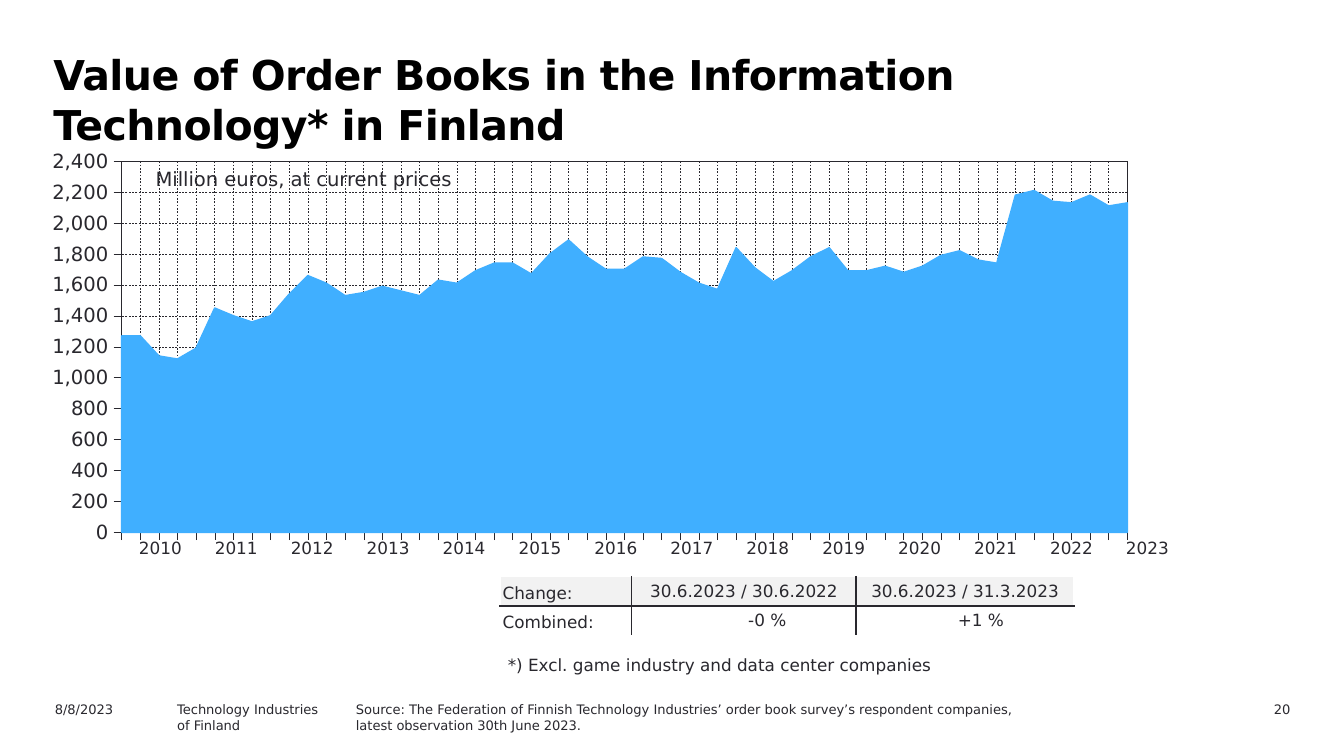
from lxml import etree
from pptx import Presentation
from pptx import util as u
from pptx.chart.data import CategoryChartData
from pptx.dml.color import RGBColor
from pptx.enum import chart as charts, dml, text
from pptx.oxml import parse_xml
from pptx.oxml.ns import nsdecls, qn

FONT = "DejaVu Sans"
INK, WHITE, BLUE, GREY = "29282E", "FFFFFF", "40AFFF", "F2F2F2"
LEFT, CENTER, RIGHT = text.PP_ALIGN.LEFT, text.PP_ALIGN.CENTER, text.PP_ALIGN.RIGHT
MIDDLE, BOTTOM = text.MSO_ANCHOR.MIDDLE, text.MSO_ANCHOR.BOTTOM
NO_STYLE = "{2D5ABB26-0587-4C30-8999-92F81FD0307C}"

ORDER_BOOKS = [
    1270, 1270, 1140, 1120, 1190, 1450, 1400, 1360, 1400, 1540, 1660,
    1610, 1530, 1550, 1590, 1560, 1530, 1630, 1610, 1690, 1740, 1740,
    1670, 1800, 1890, 1780, 1700, 1700, 1780, 1770, 1680, 1610, 1570,
    1840, 1710, 1620, 1690, 1780, 1840, 1690, 1690, 1720, 1680, 1720,
    1790, 1820, 1760, 1740, 2180, 2210, 2140, 2130, 2180, 2110, 2130,
]
CHANGES = [
    ["Change:", "30.6.2023 / 30.6.2022", "30.6.2023 / 31.3.2023"],
    ["Combined:", "-0 %", "+1 %"],
]


def color(hex_code):
    return RGBColor.from_string(hex_code)


def set_font(font, size, hex_code=INK, bold=False):
    font.name = FONT
    font.size = u.Pt(size)
    font.bold = bold
    font.color.rgb = color(hex_code)


def add_text(slide, box, lines, size, align=LEFT, wrap=True, hex_code=INK, bold=False):
    frame = slide.shapes.add_textbox(*map(u.Inches, box)).text_frame
    frame.word_wrap = wrap
    for index, line in enumerate(lines):
        paragraph = frame.add_paragraph() if index else frame.paragraphs[0]
        paragraph.text = line
        paragraph.alignment = align
        set_font(paragraph.font, size, hex_code, bold)
    return frame


def add_title(slide):
    title = "Value of Order Books in the Information Technology* in Finland"
    frame = add_text(slide, (0.28, 0.31, 8.74, 0.71), [title], 22,
                     hex_code="000000", bold=True)
    paragraph = frame.paragraphs[0]
    paragraph.line_spacing = u.Pt(27)
    paragraph._p.get_or_add_pPr().set("marL", str(u.Inches(0.02)))
    paragraph.runs[0].font._element.set("spc", "-30")


def style_line(line, width, dashed=False):
    line.color.rgb = color(INK)
    line.width = u.Pt(width)
    if dashed:
        line.dash_style = dml.MSO_LINE.DASH


def style_axis(axis):
    axis.major_tick_mark = charts.XL_TICK_MARK.OUTSIDE
    axis.minor_tick_mark = charts.XL_TICK_MARK.NONE
    axis.has_major_gridlines = True
    style_line(axis.format.line, 0.22)
    style_line(axis.major_gridlines.format.line, 0.25, dashed=True)


def place_plot(chart, x, y, w, h):
    """Fix the inner plot area as fractions of the chart and frame it."""
    plot_area = chart._chartSpace.find(".//" + qn("c:plotArea"))
    for old in plot_area.findall(qn("c:layout")):
        plot_area.remove(old)
    parts = "".join(f'<c:{name} val="{value}"/>' for name, value in (
        ("layoutTarget", "inner"), ("xMode", "edge"), ("yMode", "edge"),
        ("x", x), ("y", y), ("w", w), ("h", h)))
    plot_area.insert(0, parse_xml(
        f'<c:layout {nsdecls("c")}><c:manualLayout>{parts}</c:manualLayout></c:layout>'))
    plot_area.append(parse_xml(
        f'<c:spPr {nsdecls("c", "a")}><a:noFill/><a:ln w="3175"><a:solidFill>'
        f'<a:srgbClr val="{INK}"/></a:solidFill></a:ln></c:spPr>'))
    plot_area.find(".//" + qn("c:crossBetween")).set("val", "midCat")


def add_order_chart(slide):
    data = CategoryChartData(number_format="#,##0")
    data.categories = [str(n + 1) for n in range(len(ORDER_BOOKS))]
    data.add_series("Series 1", ORDER_BOOKS)
    chart = slide.shapes.add_chart(
        charts.XL_CHART_TYPE.AREA_STACKED,
        *map(u.Inches, (0.2, 1.11, 9.4, 3.12)), data).chart
    chart.has_legend = False
    chart.has_title = False
    set_font(chart.font, 10.5)
    chart.plots[0].vary_by_categories = False

    series = chart.plots[0].series[0]
    series.format.fill.solid()
    series.format.fill.fore_color.rgb = color(BLUE)
    series.format.line.color.rgb = color(BLUE)
    series.format.line.width = u.Pt(0.88)

    style_axis(chart.category_axis)
    chart.category_axis.tick_label_position = charts.XL_TICK_LABEL_POSITION.NONE
    values = chart.value_axis
    style_axis(values)
    values.minimum_scale, values.maximum_scale, values.major_unit = 0, 2400, 200
    values.tick_labels.number_format = "#,##0"
    values.tick_labels.number_format_is_linked = False
    set_font(values.tick_labels.font, 10.5)
    place_plot(chart, 0.075, 0.029, 0.796, 0.885)


def add_plain_table(slide, rows, columns, box):
    table = slide.shapes.add_table(rows, columns, *map(u.Inches, box)).table
    table.first_row = table.horz_banding = False
    table._tbl.tblPr.find(qn("a:tableStyleId")).text = NO_STYLE
    return table


def fill_cell(cell, words, align):
    paragraph = cell.text_frame.paragraphs[0]
    paragraph.text = words
    paragraph.alignment = align
    set_font(paragraph.font, 9)


def set_borders(cell, colors):
    """Draw the left, right, top and bottom edges, in that order."""
    properties = cell._tc.get_or_add_tcPr()
    for index, (side, hex_code) in enumerate(zip("LRTB", colors)):
        line = etree.Element(qn(f"a:ln{side}"), w="12700")
        solid = etree.SubElement(line, qn("a:solidFill"))
        etree.SubElement(solid, qn("a:srgbClr"), val=hex_code)
        properties.insert(index, line)


def add_change_table(slide):
    table = add_plain_table(slide, 2, 3, (3.72, 4.29, 4.27, 0.44))
    for column, width in zip(table.columns, (0.98, 1.67, 1.62)):
        column.width = u.Inches(width)
    for r, row in enumerate(CHANGES):
        for c, words in enumerate(row):
            cell = table.cell(r, c)
            cell.margin_left = cell.margin_right = u.Inches(0.02)
            cell.margin_top = cell.margin_bottom = u.Inches(0.02)
            cell.vertical_anchor = MIDDLE if c else BOTTOM
            align = LEFT if c == 0 else RIGHT if r else CENTER
            if align == RIGHT:
                cell.margin_right = u.Inches(0.52)
            fill_cell(cell, words, align)
            cell.fill.solid()
            cell.fill.fore_color.rgb = color(WHITE if r else GREY)
            inner_edges = (c > 0, c < 2, r > 0, r < 1)
            set_borders(cell, [INK if inner else WHITE for inner in inner_edges])


def add_year_labels(slide):
    years = range(2010, 2024)
    table = add_plain_table(slide, 1, len(years), (0.91, 3.96, 7.91, 0.31))
    for cell, year in zip(table.iter_cells(), years):
        fill_cell(cell, str(year), CENTER)


def main():
    presentation = Presentation()
    presentation.slide_width = u.Inches(10)
    presentation.slide_height = u.Inches(10 * 9 / 16)
    slide = presentation.slides.add_slide(presentation.slide_layouts[6])

    add_title(slide)
    add_text(slide, (8.76, 5.17, 0.94, 0.18), ["20"], 7, RIGHT)
    add_order_chart(slide)
    add_text(slide, (1.06, 1.19, 2.44, 0.27),
             ["Million euros, at current prices"], 10.5, wrap=False)
    add_change_table(slide)
    add_text(slide, (3.68, 4.82, 3.7, 0.25),
             ["*) Excl. game industry and data center companies"], 9)
    add_text(slide, (2.55, 5.17, 5.36, 0.4),
             ["Source: The Federation of Finnish Technology Industries’ order book "
              "survey’s respondent companies, latest observation 30th June 2023."], 7)
    add_text(slide, (1.22, 5.17, 1.8, 0.18), ["Technology Industries", "of Finland"], 7)
    add_text(slide, (0.31, 5.17, 1, 0.18), ["8/8/2023"], 7)
    add_year_labels(slide)
    presentation.save("out.pptx")


if __name__ == "__main__":
    main()
